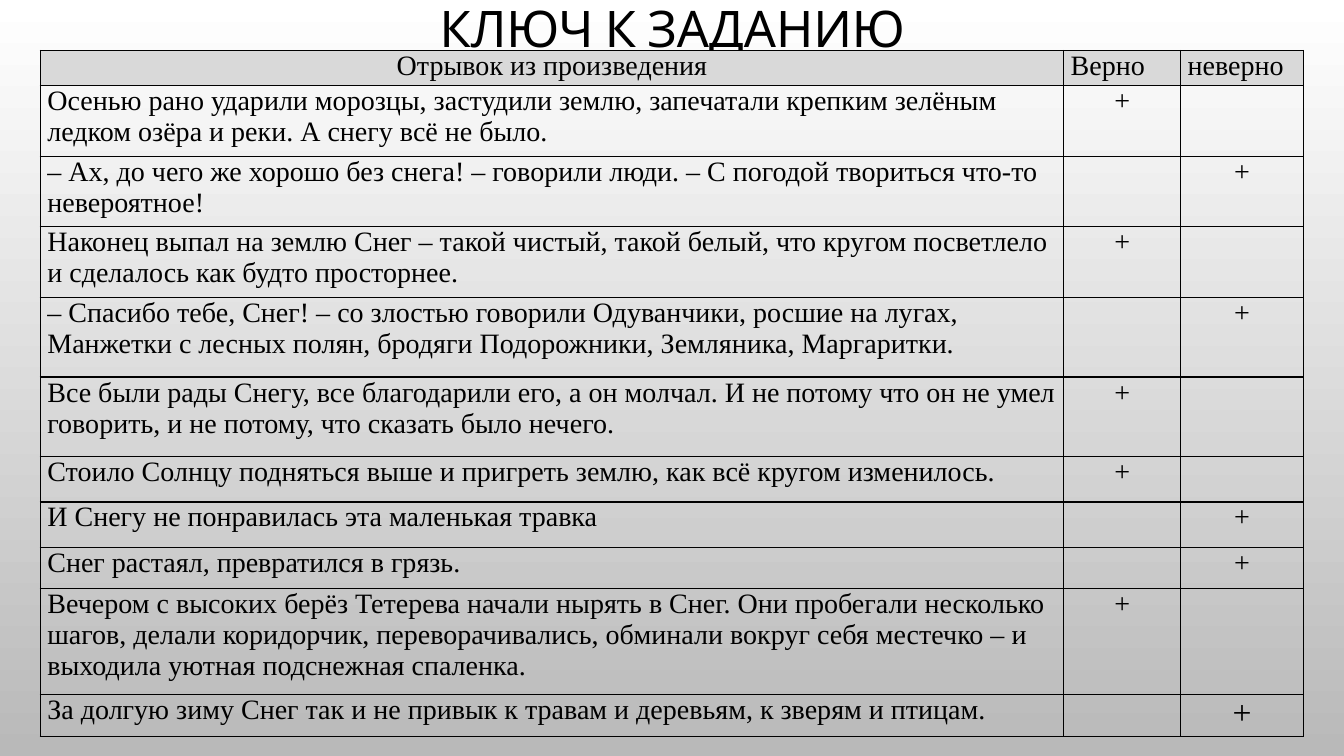
from lxml.etree import SubElement
from pptx import Presentation
from pptx.dml.color import RGBColor
from pptx.enum.text import MSO_ANCHOR, MSO_AUTO_SIZE, PP_ALIGN
from pptx.oxml.ns import qn
from pptx.util import Inches, Pt

BLACK = RGBColor(0x00, 0x00, 0x00)
WHITE = RGBColor(0xFF, 0xFF, 0xFF)
GREY = RGBColor(0xB9, 0xB9, 0xB9)
HEADER_GREY = RGBColor(0xD9, 0xD9, 0xD9)

TITLE = "КЛЮЧ К ЗАДАНИЮ"
HEADINGS = ("Отрывок из произведения", "Верно", "неверно")
COLUMN_WIDTHS = (10.15, 1.16, 1.22)
HEADER_HEIGHT = 0.35
# Excerpt, whether it is correct, row height
EXCERPTS = (
    ("Осенью рано ударили морозцы, застудили землю, запечатали крепким зелёным "
     "ледком озёра и реки. А снегу всё не было.", True, 0.7),
    ("– Ах, до чего же хорошо без снега! – говорили люди. – С погодой твориться "
     "что-то невероятное!", False, 0.7),
    ("Наконец выпал на землю Снег – такой чистый, такой белый, что кругом "
     "посветлело и сделалось как будто просторнее.", True, 0.7),
    ("– Спасибо тебе, Снег! – со злостью говорили Одуванчики, росшие на лугах, "
     "Манжетки с лесных полян, бродяги Подорожники, Земляника, Маргаритки.", False, 0.79),
    ("Все были рады Снегу, все благодарили его, а он молчал. И не потому что он "
     "не умел говорить, и не потому, что сказать было нечего.", True, 0.79),
    ("Стоило Солнцу подняться выше и пригреть землю, как всё кругом изменилось.",
     True, 0.45),
    ("И Снегу не понравилась эта маленькая травка", False, 0.45),
    ("Снег растаял, превратился в грязь.", False, 0.41),
    ("Вечером с высоких берёз Тетерева начали нырять в Снег. Они пробегали "
     "несколько шагов, делали коридорчик, переворачивались, обминали вокруг себя "
     "местечко – и выходила уютная подснежная спаленка.", True, 1.05),
    ("За долгую зиму Снег так и не привык к травам и деревьям, к зверям и птицам.",
     False, 0.42),
)


def set_font(paragraph, name, size):
    paragraph.font.name = name
    paragraph.font.size = Pt(size)
    paragraph.font.color.rgb = BLACK


def paint_background(page):
    fill = page.background.fill
    fill.gradient()
    fill.gradient_angle = 270
    for stop, position, color in zip(fill.gradient_stops, (0, 1), (WHITE, GREY)):
        stop.position = position
        stop.color.rgb = color


def add_title(page, left, top, width, height):
    title = page.shapes.title
    title.left, title.top, title.width, title.height = map(
        Inches, (left, top, width, height))
    frame = title.text_frame
    frame.text = TITLE
    frame.auto_size = MSO_AUTO_SIZE.NONE
    frame.vertical_anchor = MSO_ANCHOR.MIDDLE
    paragraph = frame.paragraphs[0]
    paragraph.alignment = PP_ALIGN.CENTER
    paragraph.line_spacing = 0.9
    set_font(paragraph, "Cabin", 36)


def add_borders(cell):
    properties = cell._tc.get_or_add_tcPr()
    for side in ("a:lnL", "a:lnR", "a:lnT", "a:lnB"):
        line = SubElement(properties, qn(side), w=str(Pt(1)))
        solid = SubElement(line, qn("a:solidFill"))
        SubElement(solid, qn("a:srgbClr"), val=str(BLACK))


def fill_cell(cell, text, alignment, size=20, color=None):
    add_borders(cell)
    if color is None:
        cell.fill.background()
    else:
        cell.fill.solid()
        cell.fill.fore_color.rgb = color
    cell.margin_left = cell.margin_right = Inches(0.07)
    cell.margin_top = cell.margin_bottom = 0
    cell.text = text
    paragraph = cell.text_frame.paragraphs[0]
    paragraph.alignment = alignment
    set_font(paragraph, "Times New Roman", size)


def add_answer_table(page, left, top):
    heights = [HEADER_HEIGHT] + [height for _, _, height in EXCERPTS]
    table = page.shapes.add_table(
        len(heights), len(COLUMN_WIDTHS), Inches(left), Inches(top),
        Inches(sum(COLUMN_WIDTHS)), Inches(sum(heights))).table
    table.first_row = table.horz_banding = False
    for column, width in zip(table.columns, COLUMN_WIDTHS):
        column.width = Inches(width)
    for row, height in zip(table.rows, heights):
        row.height = Inches(height)

    for index, heading in enumerate(HEADINGS):
        alignment = PP_ALIGN.LEFT if index else PP_ALIGN.CENTER
        fill_cell(table.cell(0, index), heading, alignment, color=HEADER_GREY)
    for index, (excerpt, correct, _) in enumerate(EXCERPTS, 1):
        mark_size = 24 if index == len(EXCERPTS) else 20
        fill_cell(table.cell(index, 0), excerpt, PP_ALIGN.LEFT)
        fill_cell(table.cell(index, 1), "+" if correct else "", PP_ALIGN.CENTER)
        fill_cell(table.cell(index, 2), "" if correct else "+", PP_ALIGN.CENTER, mark_size)


def main():
    deck = Presentation()
    deck.slide_width, deck.slide_height = Inches(13.33), Inches(7.5)
    page = deck.slides.add_slide(deck.slide_layouts[5])
    paint_background(page)
    add_title(page, 0.92, 0, 11.5, 0.62)
    add_answer_table(page, 0.4, 0.5)
    deck.save("out.pptx")


if __name__ == "__main__":
    main()
